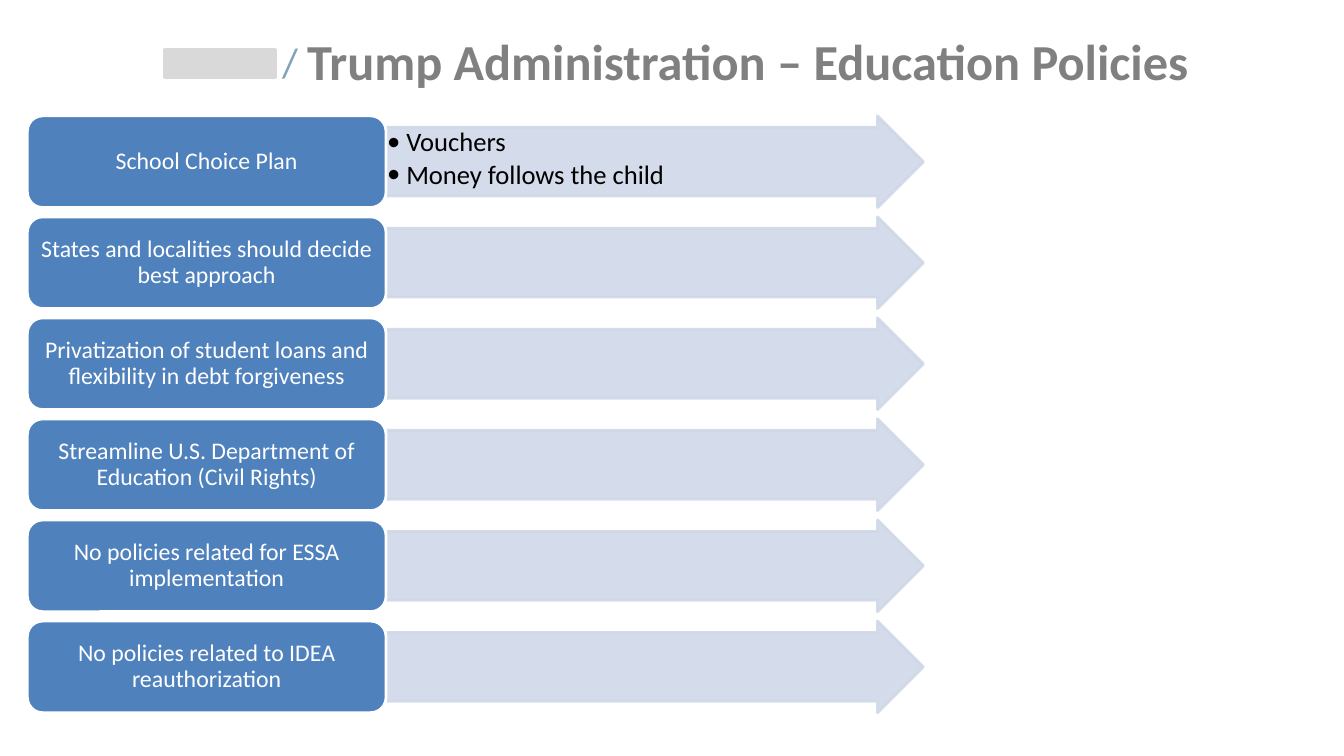
from dataclasses import dataclass

from lxml import etree
from pptx import Presentation
from pptx.dml.color import RGBColor
from pptx.enum.shapes import MSO_SHAPE
from pptx.enum.text import MSO_ANCHOR, PP_ALIGN
from pptx.oxml.ns import qn
from pptx.util import Cm, Pt

RECTANGLE = MSO_SHAPE.RECTANGLE
ROUNDED, ARROW = MSO_SHAPE.ROUNDED_RECTANGLE, MSO_SHAPE.RIGHT_ARROW
LEFT, CENTER = PP_ALIGN.LEFT, PP_ALIGN.CENTER
TOP, MIDDLE = MSO_ANCHOR.TOP, MSO_ANCHOR.MIDDLE

FIRST_TOP, LAST_TOP = 2.92, 15.65
ROW_HEIGHT = 2.31
POLICY_LEFT, POLICY_WIDTH = 0.69, 9.04
ARROW_LEFT, ARROW_WIDTH = POLICY_LEFT + POLICY_WIDTH, 13.54


@dataclass
class Policy:
    name: str
    details: tuple[str, ...] = ()


POLICIES = [
    Policy("School Choice Plan", ("Vouchers", "Money follows the child")),
    Policy("States and localities should decide best approach"),
    Policy("Privatization of student loans and flexibility in debt forgiveness"),
    Policy("Streamline U.S. Department of Education (Civil Rights)"),
    Policy("No policies related for ESSA implementation"),
    Policy("No policies related to IDEA reauthorization"),
]


def rgb(value: str) -> RGBColor:
    return RGBColor.from_string(value)


def add_bullet(paragraph, indent: float) -> None:
    properties = paragraph._p.get_or_add_pPr()
    properties.set("marL", str(Cm(indent)))
    properties.set("indent", str(-Cm(indent)))
    etree.SubElement(properties, qn("a:buFont")).set("typeface", "Calibri")
    etree.SubElement(properties, qn("a:buChar")).set("char", "•")


def write(shape, *lines: str, size: float, color: str, bold: bool = False,
          align=LEFT, anchor=TOP, margins=(0.25, 0.13), line_spacing: float = 1.0,
          after: float = 0, bullet_indent: float = 0) -> None:
    frame = shape.text_frame
    frame.word_wrap = True
    frame.vertical_anchor = anchor
    frame.margin_left = frame.margin_right = Cm(margins[0])
    frame.margin_top = frame.margin_bottom = Cm(margins[1])
    for index, line in enumerate(lines):
        paragraph = frame.add_paragraph() if index else frame.paragraphs[0]
        paragraph.alignment = align
        paragraph.line_spacing = line_spacing
        paragraph.space_before = Pt(0)
        paragraph.space_after = Pt(after)
        if bullet_indent:
            add_bullet(paragraph, bullet_indent)
        run = paragraph.add_run()
        run.text = line
        run.font.name, run.font.size, run.font.bold = "Calibri", Pt(size), bold
        run.font.color.rgb = rgb(color)


def add_block(slide, kind, left: float, top: float, width: float, fill: str,
              line: str, height: float = ROW_HEIGHT, opacity: int = 100):
    block = slide.shapes.add_shape(kind, Cm(left), Cm(top), Cm(width), Cm(height))
    block.shadow.inherit = False
    block.fill.solid()
    block.fill.fore_color.rgb = rgb(fill)
    block.line.color.rgb = rgb(line)
    block.line.width = Pt(2)
    if opacity < 100:
        for color in block._element.spPr.iter(qn("a:srgbClr")):
            etree.SubElement(color, qn("a:alpha")).set("val", str(opacity * 1000))
    return block


def add_policy(slide, policy: Policy, top: float) -> None:
    """Draw the arrow with its details, then the policy name at its tail."""
    arrow = add_block(slide, ARROW, ARROW_LEFT, top, ARROW_WIDTH,
                      "D0D8E8", "D0D8E8", opacity=90)
    arrow.adjustments[0] = 0.75
    arrow.adjustments[1] = 0.5
    if policy.details:
        write(arrow, *policy.details, size=19, color="000000", margins=(0.03, 0.03),
              line_spacing=0.9, after=2.85, bullet_indent=0.48)
    name = add_block(slide, ROUNDED, POLICY_LEFT, top, POLICY_WIDTH, "4F81BD", "FFFFFF")
    write(name, policy.name, size=17, color="FFFFFF", align=CENTER, anchor=MIDDLE,
          margins=(0.17, 0.1), line_spacing=0.9)


def add_heading(slide) -> None:
    add_block(slide, RECTANGLE, 4.15, 1.25, 2.8, "D9D9D9", "D9D9D9", height=0.7)
    slash = slide.shapes.add_textbox(Cm(6.86), Cm(0.79), Cm(1), Cm(1.7))
    write(slash, "/", size=29.3, color="80A4B7")
    title = slide.shapes.title
    title.left, title.top, title.width, title.height = Cm(7.49), Cm(0.64), Cm(23.88), Cm(1.8)
    write(title, "Trump Administration – Education Policies", size=36,
          color="808080", bold=True)


def main() -> None:
    presentation = Presentation()
    presentation.slide_width, presentation.slide_height = Cm(33.87), Cm(19.05)
    slide = presentation.slides.add_slide(presentation.slide_layouts[5])
    add_heading(slide)
    pitch = (LAST_TOP - FIRST_TOP) / (len(POLICIES) - 1)
    for row, policy in enumerate(POLICIES):
        add_policy(slide, policy, FIRST_TOP + row * pitch)
    presentation.save("out.pptx")


if __name__ == "__main__":
    main()
